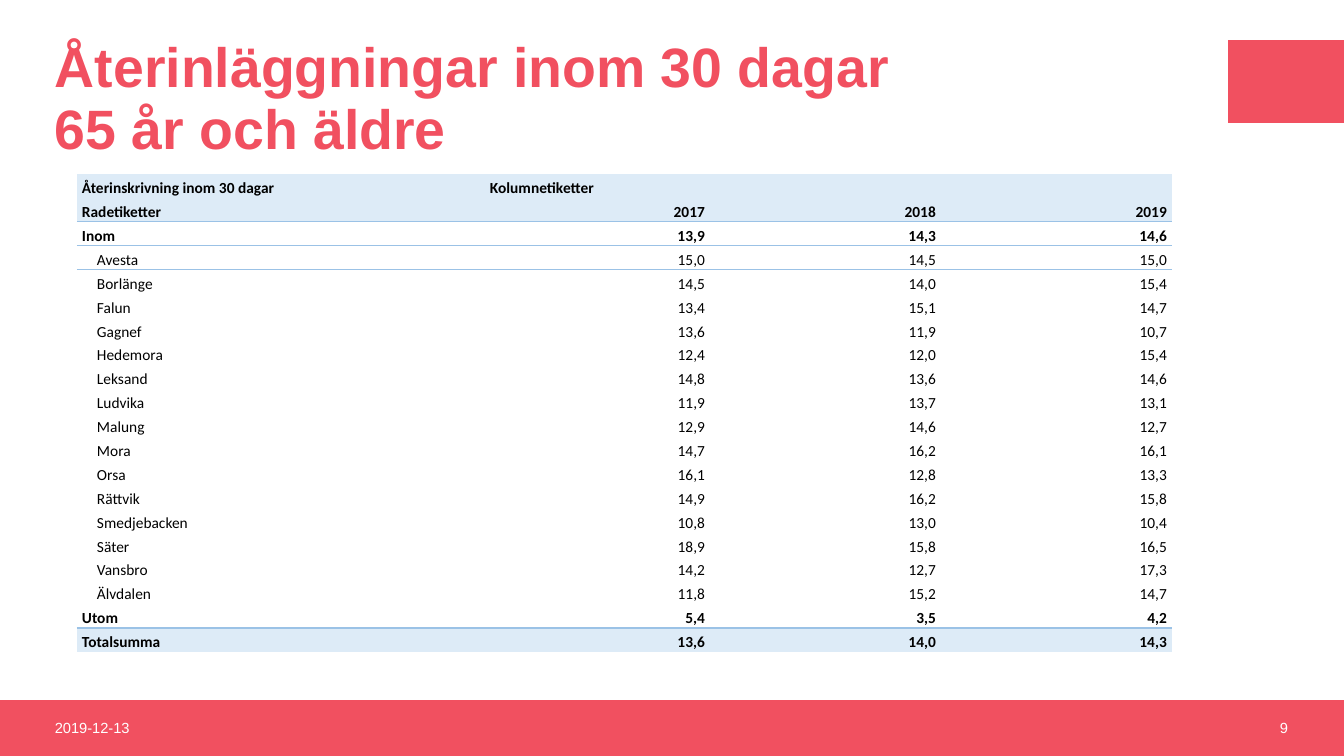
"""Build the slide on readmissions within 30 days for patients aged 65 and over."""
from lxml import etree
from pptx import Presentation
from pptx.dml.color import RGBColor
from pptx.enum.shapes import MSO_SHAPE
from pptx.enum.text import MSO_ANCHOR, PP_ALIGN
from pptx.oxml.ns import qn
from pptx.util import Emu, Pt

CORAL = RGBColor(0xF1, 0x50, 0x60)
PALE_BLUE = RGBColor(0xDD, 0xEB, 0xF7)
RULE_BLUE = RGBColor(0x9B, 0xC2, 0xE6)
BLACK = RGBColor(0, 0, 0)
WHITE = RGBColor(0xFF, 0xFF, 0xFF)

TITLE = "Återinläggningar inom 30 dagar\v65 år och äldre"
DATE = "2019-12-13"
PAGE = "9"
HEADER = [
    ("Återinskrivning inom 30 dagar", "Kolumnetiketter", "", ""),
    ("Radetiketter", "2017", "2018", "2019"),
]
INSIDE = [("Inom", "13,9", "14,3", "14,6")]
TOWNS = [
    ("Avesta", "15,0", "14,5", "15,0"),
    ("Borlänge", "14,5", "14,0", "15,4"),
    ("Falun", "13,4", "15,1", "14,7"),
    ("Gagnef", "13,6", "11,9", "10,7"),
    ("Hedemora", "12,4", "12,0", "15,4"),
    ("Leksand", "14,8", "13,6", "14,6"),
    ("Ludvika", "11,9", "13,7", "13,1"),
    ("Malung", "12,9", "14,6", "12,7"),
    ("Mora", "14,7", "16,2", "16,1"),
    ("Orsa", "16,1", "12,8", "13,3"),
    ("Rättvik", "14,9", "16,2", "15,8"),
    ("Smedjebacken", "10,8", "13,0", "10,4"),
    ("Säter", "18,9", "15,8", "16,5"),
    ("Vansbro", "14,2", "12,7", "17,3"),
    ("Älvdalen", "11,8", "15,2", "14,7"),
]
OUTSIDE = [("Utom", "5,4", "3,5", "4,2")]
TOTAL = [("Totalsumma", "13,6", "14,0", "14,3")]
ROWS = HEADER + INSIDE + TOWNS + OUTSIDE + TOTAL
SHADED = HEADER + TOTAL
RULED_BELOW = HEADER[1:] + INSIDE + OUTSIDE

WIDTH, HEIGHT = 1344, 756
BARS = [(0, 700, WIDTH, 56), (1228, 40, 116, 83)]
TABLE_LEFT, TABLE_TOP, TABLE_HEIGHT = 77, 174, 478
COLUMNS = [408, 225, 231, 231]
NO_STYLE = "{2D5ABB26-0587-4C30-8999-92F81FD0307C}"


def px(length):
    return Emu(round(length * 914400 / 100.8))


def style(paragraph, face, size, color, bold=False):
    font = paragraph.font
    font.name, font.size, font.bold = face, Pt(size), bold
    font.color.rgb = color


def add_bar(slide, box):
    bar = slide.shapes.add_shape(MSO_SHAPE.RECTANGLE, *map(px, box))
    bar.shadow.inherit = False
    bar.fill.solid()
    bar.fill.fore_color.rgb = CORAL
    bar.line.fill.background()


def add_text(slide, box, text, size, color, bold=False, align=PP_ALIGN.LEFT):
    frame = slide.shapes.add_textbox(*map(px, box)).text_frame
    frame.word_wrap = True
    frame.vertical_anchor = MSO_ANCHOR.MIDDLE
    frame.margin_top = frame.margin_bottom = 0
    frame.text = text
    paragraph = frame.paragraphs[0]
    paragraph.alignment = align
    style(paragraph, "Arial", size, color, bold)
    return paragraph


def add_rule(cell, side):
    rule = etree.Element(qn(f"a:{side}"), w=str(Pt(1)))
    fill = etree.SubElement(rule, qn("a:solidFill"))
    etree.SubElement(fill, qn("a:srgbClr"), val=str(RULE_BLUE))
    cell._tc.get_or_add_tcPr().insert(0, rule)


def fill_cell(cell, text, row, column):
    cell.margin_left = cell.margin_right = px(5)
    cell.margin_top = cell.margin_bottom = 0
    cell.vertical_anchor = MSO_ANCHOR.BOTTOM
    cell.text = text
    paragraph = cell.text_frame.paragraphs[0]
    paragraph.line_spacing = 1.07
    if column and row != HEADER[0]:
        paragraph.alignment = PP_ALIGN.RIGHT
    if row in TOWNS and column == 0:
        paragraph._p.get_or_add_pPr().set("marL", str(px(15)))
    style(paragraph, "Calibri", 11, BLACK, row not in TOWNS)
    if not text:
        etree.SubElement(paragraph._p, qn("a:endParaRPr"), sz="1100")
    if row in SHADED:
        cell.fill.solid()
        cell.fill.fore_color.rgb = PALE_BLUE
    else:
        cell.fill.background()


def add_table(slide):
    frame = slide.shapes.add_table(
        len(ROWS), len(COLUMNS), px(TABLE_LEFT), px(TABLE_TOP),
        px(sum(COLUMNS)), px(TABLE_HEIGHT))
    table = frame.table
    table.first_row = table.horz_banding = False
    table._tbl.tblPr.find(qn("a:tableStyleId")).text = NO_STYLE
    for column, width in zip(table.columns, COLUMNS):
        column.width = px(width)
    for r, row in enumerate(ROWS):
        table.rows[r].height = px(TABLE_HEIGHT / len(ROWS))
        for c, text in enumerate(row):
            cell = table.cell(r, c)
            fill_cell(cell, text, row, c)
            if row in RULED_BELOW:
                add_rule(cell, "lnB")
            if r and ROWS[r - 1] in RULED_BELOW:
                add_rule(cell, "lnT")


def main():
    deck = Presentation()
    deck.slide_width, deck.slide_height = px(WIDTH), px(HEIGHT)
    slide = deck.slides.add_slide(deck.slide_layouts[6])
    for box in BARS:
        add_bar(slide, box)
    title = add_text(slide, (45, 40, 1170, 120), TITLE, 39.6, CORAL, bold=True)
    title.line_spacing = 0.94
    add_table(slide)
    add_text(slide, (45, 700, 302, 55), DATE, 10.5, WHITE)
    add_text(slide, (996, 700, 302, 55), PAGE, 10.5, WHITE, align=PP_ALIGN.RIGHT)
    deck.save("out.pptx")


if __name__ == "__main__":
    main()
